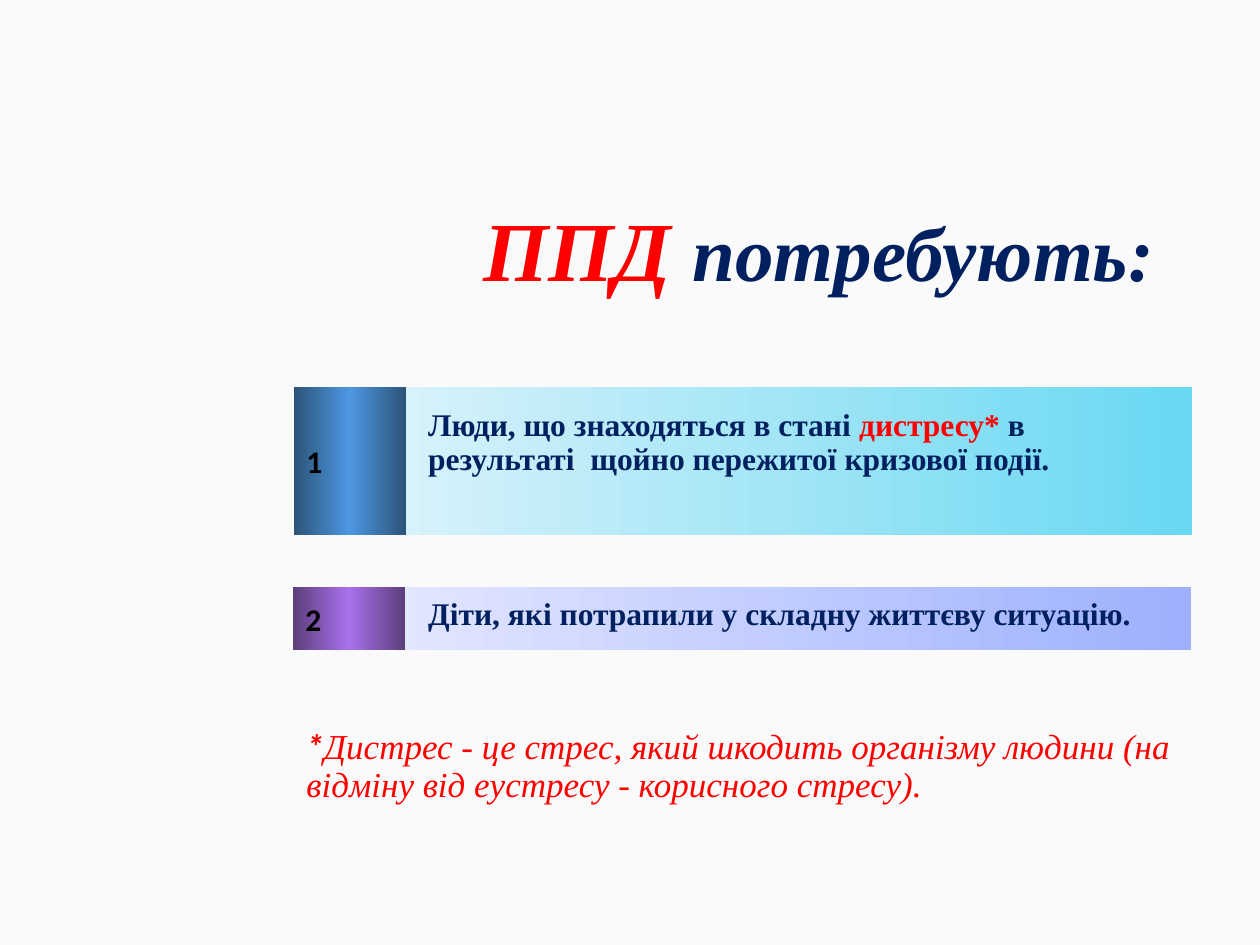
from lxml import etree
from pptx import Presentation
from pptx.dml.color import RGBColor
from pptx.enum.shapes import MSO_SHAPE as SHAPE
from pptx.enum.text import MSO_ANCHOR as ANCHOR, MSO_AUTO_SIZE as AUTO, PP_ALIGN as ALIGN
from pptx.oxml.ns import qn
from pptx.util import Pt

SERIF, SANS = "Times New Roman", "Calibri"
NAVY, RED, BLACK = "002060", "FF0000", "000000"


def color(value):
    return RGBColor.from_string(value)


def add_run(p, text, size, hex_color, font=SERIF, bold=True, italic=False):
    r = p.add_run()
    r.text = text
    f = r.font
    f.size, f.name, f.bold, f.italic = Pt(size), font, bold, italic
    f.color.rgb = color(hex_color)


def add_text(slide, x, y, w, h):
    tf = slide.shapes.add_textbox(Pt(x), Pt(y), Pt(w), Pt(h)).text_frame
    tf.word_wrap = True
    tf.auto_size = AUTO.SHAPE_TO_FIT_TEXT
    p = tf.paragraphs[0]
    p.line_spacing = 0.9
    return p


def set_gradient(s, colors):
    s.fill.gradient()
    s.fill.gradient_angle = 0
    stops = s.fill._xPr.find(qn("a:gradFill")).find(qn("a:gsLst"))
    for stop in list(stops):
        stops.remove(stop)
    for i, value in enumerate(colors):
        pos = str(100000 * i // (len(colors) - 1))
        stop = etree.SubElement(stops, qn("a:gs"), pos=pos)
        etree.SubElement(stop, qn("a:srgbClr"), val=value)


def add_bar(group, x, y, w, h, colors):
    s = group.shapes.add_shape(SHAPE.RECTANGLE, Pt(x), Pt(y), Pt(w), Pt(h))
    s.shadow.inherit = False
    s.line.fill.background()
    set_gradient(s, colors)
    return s


def add_title(slide, x, y, w, h):
    s = slide.shapes.title
    s.left, s.top, s.width, s.height = Pt(x), Pt(y), Pt(w), Pt(h)
    tf = s.text_frame
    tf.auto_size = AUTO.NONE
    tf.vertical_anchor = ANCHOR.MIDDLE
    p = tf.paragraphs[0]
    p.alignment, p.line_spacing = ALIGN.CENTER, 0.9
    add_run(p, "ППД ", 48, RED, italic=True)
    add_run(p, "потребують: ", 44, NAVY, italic=True)


def add_item(slide, x, y, w, h, number, badge_colors, panel_colors):
    group = slide.shapes.add_group_shape()
    add_bar(group, x + 56, y, w - 56, h, panel_colors)
    badge = add_bar(group, x, y, 64, h, badge_colors)
    tf = badge.text_frame
    tf.vertical_anchor = ANCHOR.MIDDLE
    p = tf.paragraphs[0]
    p.alignment = ALIGN.LEFT
    add_run(p, number, 18, BLACK, SANS)


def add_item_text(slide, x, y, w, h, runs):
    p = add_text(slide, x, y, w, h)
    for text, hex_color in runs:
        add_run(p, text, 18, hex_color)


def add_footnote(slide, x, y, w, h):
    p = add_text(slide, x, y, w, h)
    add_run(p, "*", 20, RED, SANS, italic=True)
    add_run(p, "Дистрес - це стрес, який шкодить організму людини "
            "(на відміну від еустресу - корисного стресу).",
            20, RED, bold=False, italic=True)


def main():
    prs = Presentation()
    prs.slide_width, prs.slide_height = Pt(720), Pt(540)
    slide = prs.slides.add_slide(prs.slide_layouts[5])
    bg = slide.background.fill
    bg.solid()
    bg.fore_color.rgb = color("FAFAFA")

    add_title(slide, 238.3, 110.2, 470.2, 70.6)
    add_item(slide, 168, 221, 513, 84.5, "1",
             ["2C5478", "4D98E3", "2C5478"], ["D8F2FA", "68D8F2"])
    add_item(slide, 167.5, 335.5, 513, 36, "2",
             ["5C3E7A", "A971ED", "5C3E7A"], ["E2E6FF", "9EB0FE"])
    add_item_text(slide, 237.6, 230.4, 417.6, 46.8, [
        ("Люди, що знаходяться в стані ", NAVY),
        ("дистресу* ", RED),
        ("в результаті  щойно пережитої кризової події.", NAVY),
    ])
    add_item_text(slide, 237.6, 338.4, 458.6, 26.6, [
        ("Діти, які потрапили у складну життєву ситуацію.", NAVY),
    ])
    add_footnote(slide, 168, 413, 512.6, 50.6)
    prs.save("out.pptx")


if __name__ == "__main__":
    main()
